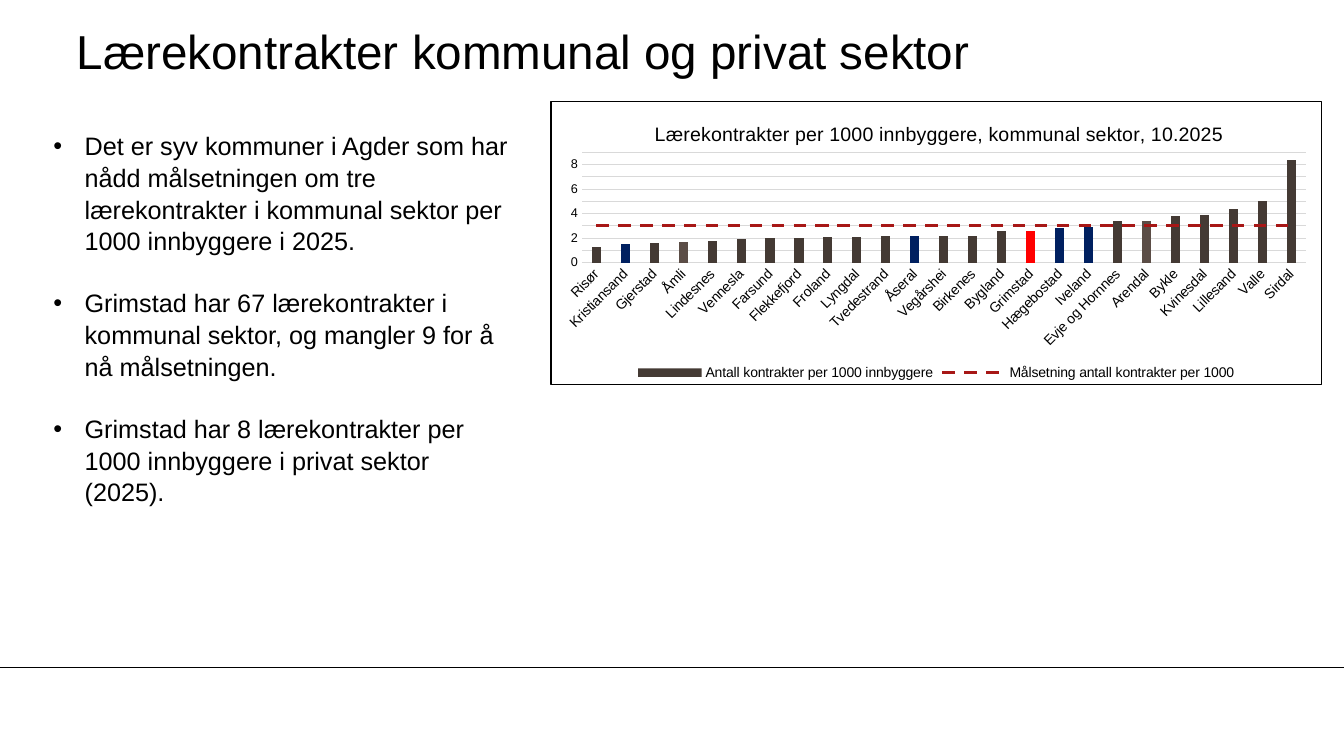
from lxml.etree import SubElement
from pptx import Presentation
from pptx.chart.data import CategoryChartData
from pptx.dml.color import RGBColor
from pptx.enum.chart import XL_CHART_TYPE as ChartType, XL_LEGEND_POSITION as LegendPosition
from pptx.enum.chart import XL_MARKER_STYLE as MarkerStyle, XL_TICK_MARK as TickMark
from pptx.enum.dml import MSO_LINE_DASH_STYLE as DashStyle
from pptx.enum.shapes import MSO_CONNECTOR_TYPE as ConnectorType
from pptx.enum.text import MSO_ANCHOR as Anchor, MSO_AUTO_SIZE as AutoSize, PP_ALIGN as Align
from pptx.oxml import parse_xml
from pptx.oxml.ns import nsdecls, qn
from pptx.util import Pt

PX = 9144
BLACK = RGBColor(0x00, 0x00, 0x00)
GRID = RGBColor(0xD9, 0xD9, 0xD9)
BROWN = RGBColor(0x44, 0x3A, 0x34)
LIGHT_BROWN = RGBColor(0x5B, 0x4D, 0x46)
NAVY = RGBColor(0x00, 0x20, 0x60)
RED = RGBColor(0xFF, 0x00, 0x00)
TARGET_RED = RGBColor(0xA7, 0x17, 0x16)

BULLETS = [
    "Det er syv kommuner i Agder som har nådd målsetningen om tre lærekontrakter "
    "i kommunal sektor per 1000 innbyggere i 2025.",
    "Grimstad har 67 lærekontrakter i kommunal sektor, og mangler 9 for å nå målsetningen.",
    "Grimstad har 8 lærekontrakter per 1000 innbyggere i privat sektor (2025).",
]
CONTRACTS = {
    "Risør": 1.3, "Kristiansand": 1.5, "Gjerstad": 1.6, "Åmli": 1.7, "Lindesnes": 1.8,
    "Vennesla": 1.9, "Farsund": 2, "Flekkefjord": 2, "Froland": 2.1, "Lyngdal": 2.1,
    "Tvedestrand": 2.2, "Åseral": 2.2, "Vegårshei": 2.2, "Birkenes": 2.2, "Bygland": 2.6,
    "Grimstad": 2.6, "Hægebostad": 2.8, "Iveland": 2.9, "Evje og Hornnes": 3.4,
    "Arendal": 3.4, "Bykle": 3.8, "Kvinesdal": 3.9, "Lillesand": 4.4, "Valle": 5,
    "Sirdal": 8.4,
}
HIGHLIGHTS = {
    "Kristiansand": NAVY, "Åmli": LIGHT_BROWN, "Åseral": NAVY, "Grimstad": RED,
    "Hægebostad": NAVY, "Iveland": NAVY, "Arendal": LIGHT_BROWN,
}
TARGET = 3


class SlideBuilder:
    """Builds the elements of one slide in a shared style."""

    def __init__(self, slide, font_name="Arial"):
        self.slide = slide
        self.font_name = font_name

    def style_font(self, font, size):
        font.name = self.font_name
        font.size = Pt(size)
        font.bold = False
        font.color.rgb = BLACK

    def place(self, shape, left, top, width, height):
        shape.left, shape.top = left * PX, top * PX
        shape.width, shape.height = width * PX, height * PX

    def rule(self, left, top, right):
        line = self.slide.shapes.add_connector(
            ConnectorType.STRAIGHT, left * PX, top * PX, right * PX, top * PX)
        line.line.color.rgb = BLACK
        line.line.width = Pt(0.75)
        SubElement(line.element.spPr, qn("a:effectLst"))

    def title(self, text, *box):
        shape = self.slide.shapes.title
        self.place(shape, *box)
        frame = shape.text_frame
        frame.text = text
        frame.word_wrap = True
        frame.auto_size = AutoSize.NONE
        frame.vertical_anchor = Anchor.MIDDLE
        frame.margin_left = frame.margin_top = frame.margin_right = frame.margin_bottom = 0
        paragraph = frame.paragraphs[0]
        paragraph.alignment = Align.LEFT
        self.style_font(paragraph.font, 34)

    def bullets(self, texts, *box):
        shape = self.slide.placeholders[1]
        self.place(shape, *box)
        frame = shape.text_frame
        frame.text = "\n".join(texts)
        frame.word_wrap = True
        frame.auto_size = AutoSize.NONE
        for index, paragraph in enumerate(frame.paragraphs):
            properties = paragraph._p.get_or_add_pPr()
            properties.set("marL", str(31 * PX))
            properties.set("indent", str(-31 * PX))
            paragraph.line_spacing = 1.05
            paragraph.space_before = Pt(21.6 if index else 0)
            self.style_font(paragraph.font, 18)

    def chart(self, heading, contracts, target, highlights, *box):
        data = CategoryChartData(number_format="0.0")
        data.categories = list(contracts)
        data.add_series("Antall kontrakter per 1000 innbyggere", contracts.values())
        data.add_series("Målsetning antall kontrakter per 1000", [target] * len(contracts))
        left, top, width, height = (length * PX for length in box)
        chart = self.slide.shapes.add_chart(
            ChartType.COLUMN_CLUSTERED, left, top, width, height, data).chart
        self.style_font(chart.font, 10)
        self.chart_title(chart, heading)
        self.chart_axes(chart)
        chart.has_legend = True
        chart.legend.position = LegendPosition.BOTTOM
        chart.legend.include_in_layout = False
        self.style_font(chart.legend.font, 10)
        self.columns(chart.plots[0], contracts, highlights)
        self.target_line(chart)
        self.chart_border(chart)
        plot_area = chart.element.find(".//" + qn("c:plotArea"))
        self.manual_layout(plot_area, 0, x=0.04, y=0.18, w=0.94, h=0.39, inner=True)

    def chart_title(self, chart, heading):
        chart.has_title = True
        frame = chart.chart_title.text_frame
        frame.text = heading
        self.style_font(frame.paragraphs[0].font, 14)
        self.manual_layout(chart.element.find(".//" + qn("c:title")), 1, x=0.13, y=0.06)

    def chart_axes(self, chart):
        category, value = chart.category_axis, chart.value_axis
        for axis, size in ((category, 10), (value, 9)):
            axis.major_tick_mark = axis.minor_tick_mark = TickMark.NONE
            self.style_font(axis.tick_labels.font, size)
        labels = category._element.find(qn("c:txPr")).find(qn("a:bodyPr"))
        labels.set("rot", "-2700000")
        value.minimum_scale, value.maximum_scale, value.major_unit = 0, 9, 1
        value.tick_labels.number_format = "0"
        value.tick_labels.number_format_is_linked = False
        value.format.line.fill.background()
        for line in (category.format.line, value.major_gridlines.format.line):
            line.color.rgb = GRID
            line.width = Pt(0.75)

    def columns(self, plot, contracts, highlights):
        plot.vary_by_categories = False
        plot.gap_width, plot.overlap = 219, -27
        series = plot.series[0]
        series.invert_if_negative = False
        series.format.fill.solid()
        series.format.fill.fore_color.rgb = BROWN
        for index, name in enumerate(contracts):
            if name in highlights:
                fill = series.points[index].format.fill
                fill.solid()
                fill.fore_color.rgb = highlights[name]

    def target_line(self, chart):
        bar_chart = chart.element.find(".//" + qn("c:barChart"))
        target = bar_chart.findall(qn("c:ser"))[1]
        for inversion in target.findall(qn("c:invertIfNegative")):
            target.remove(inversion)
        line_chart = parse_xml(
            f'<c:lineChart {nsdecls("c")}><c:grouping val="standard"/>'
            '<c:varyColors val="0"/><c:marker val="1"/></c:lineChart>')
        line_chart.insert(2, target)
        for axis in bar_chart.findall(qn("c:axId")):
            SubElement(line_chart, qn("c:axId")).set("val", axis.get("val"))
        bar_chart.addnext(line_chart)
        series = chart.plots[1].series[0]
        series.smooth = False
        series.marker.style = MarkerStyle.NONE
        series.format.line.color.rgb = TARGET_RED
        series.format.line.width = Pt(2.25)
        series.format.line.dash_style = DashStyle.DASH

    def chart_border(self, chart):
        chart.element.find(qn("c:chart")).addnext(parse_xml(
            f'<c:spPr {nsdecls("c", "a")}><a:noFill/><a:ln w="{int(Pt(0.75))}"><a:solidFill>'
            f'<a:srgbClr val="{BLACK}"/></a:solidFill></a:ln></c:spPr>'))

    def manual_layout(self, parent, position, inner=False, **fractions):
        for existing in parent.findall(qn("c:layout")):
            parent.remove(existing)
        target = '<c:layoutTarget val="inner"/>' if inner else ""
        modes = '<c:xMode val="edge"/><c:yMode val="edge"/>'
        values = "".join(f'<c:{key} val="{number}"/>' for key, number in fractions.items())
        parent.insert(position, parse_xml(
            f'<c:layout {nsdecls("c")}><c:manualLayout>{target}{modes}{values}'
            '</c:manualLayout></c:layout>'))


def main():
    presentation = Presentation()
    presentation.slide_width, presentation.slide_height = 1333 * PX, 750 * PX
    builder = SlideBuilder(presentation.slides.add_slide(presentation.slide_layouts[1]))
    builder.rule(0, 662, 1333)
    builder.title("Lærekontrakter kommunal og privat sektor", 76, 13, 1110, 75)
    builder.bullets(BULLETS, 43, 123, 475, 404)
    builder.chart("Lærekontrakter per 1000 innbyggere, kommunal sektor, 10.2025",
                  CONTRACTS, TARGET, HIGHLIGHTS, 546, 100, 765, 282)
    presentation.save("out.pptx")


if __name__ == "__main__":
    main()
